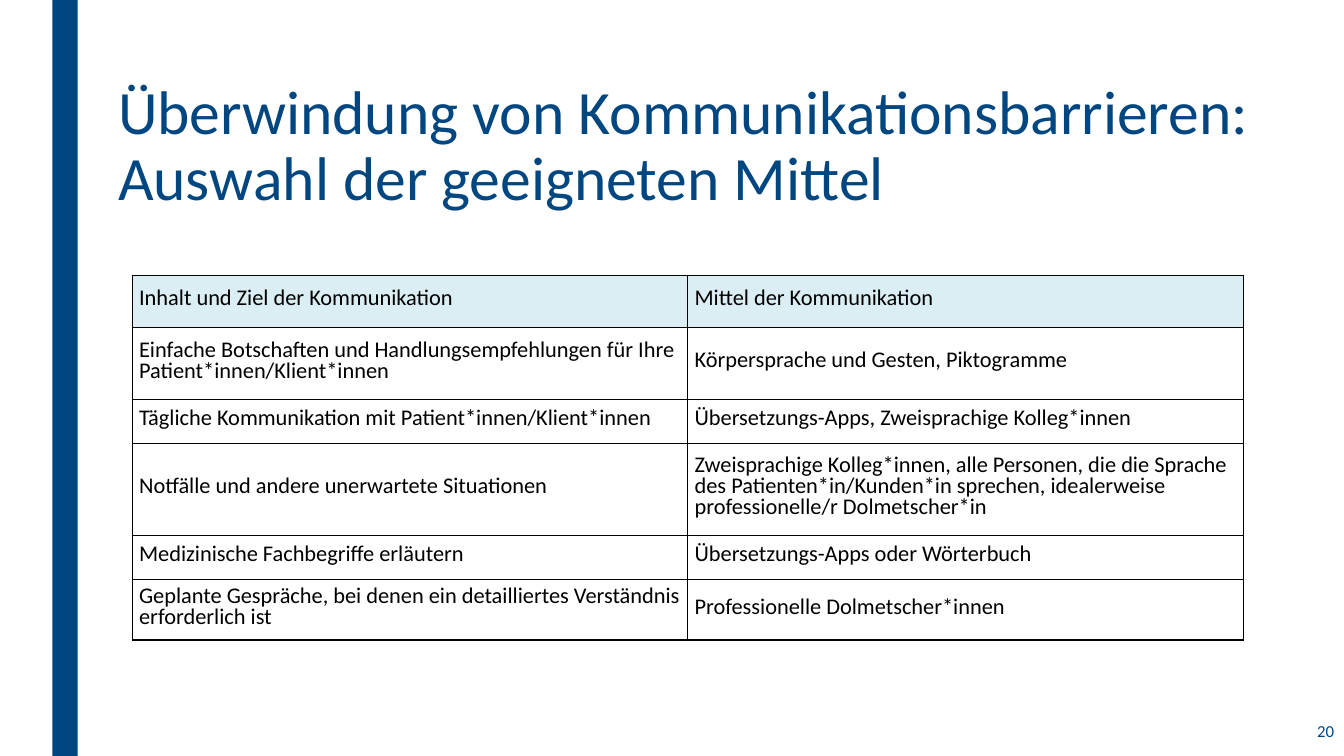
from lxml.etree import SubElement
from pptx import Presentation
from pptx.dml.color import RGBColor
from pptx.enum.shapes import MSO_SHAPE
from pptx.enum.text import MSO_ANCHOR, MSO_AUTO_SIZE, PP_ALIGN
from pptx.oxml.ns import qn
from pptx.util import Inches, Pt

NAVY, PALE, BLACK = "004680", "DBEEF4", "000000"


def tint(code):
    return RGBColor.from_string(code)


class Page:
    face = "Calibri"

    def __init__(self, deck):
        self.wide, self.high = deck.slide_width, deck.slide_height
        self.slide = deck.slides.add_slide(deck.slide_layouts[5])
        self.shapes = self.slide.shapes

    def across(self, share):
        return round(self.wide * share / 100)

    def down(self, share):
        return round(self.high * share / 100)

    def area(self, left, top, width, height):
        return self.across(left), self.down(top), self.across(width), self.down(height)

    def words(self, frame, text, size, color, align=PP_ALIGN.LEFT, lead=None):
        frame.word_wrap = True
        frame.text = text
        para = frame.paragraphs[0]
        para.alignment = align
        para.line_spacing = lead
        para.font.name = self.face
        para.font.size = Pt(size)
        para.font.color.rgb = tint(color)

    def title(self, text, *place):
        head = self.shapes.title
        head.left, head.top, head.width, head.height = self.area(*place)
        frame = head.text_frame
        frame.auto_size = MSO_AUTO_SIZE.NONE
        frame.vertical_anchor = MSO_ANCHOR.TOP
        self.words(frame, text, 44, NAVY, lead=0.89)

    def bar(self, color, *place):
        bar = self.shapes.add_shape(MSO_SHAPE.RECTANGLE, *self.area(*place))
        bar.shadow.inherit = False
        bar.fill.solid()
        bar.fill.fore_color.rgb = tint(color)
        bar.line.fill.background()

    def label(self, text, *place):
        frame = self.shapes.add_textbox(*self.area(*place)).text_frame
        frame.vertical_anchor = MSO_ANCHOR.MIDDLE
        self.words(frame, text, 12, NAVY, PP_ALIGN.RIGHT)

    def edge(self, cell):
        props = cell._tc.get_or_add_tcPr()
        for side in ("lnL", "lnR", "lnT", "lnB"):
            line = SubElement(props, qn("a:" + side), w=str(Pt(1)))
            fill = SubElement(line, qn("a:solidFill"))
            SubElement(fill, qn("a:srgbClr"), val=BLACK)

    def cell(self, cell, text, shade):
        cell.margin_left = cell.margin_right = Inches(0.07)
        cell.margin_top = cell.margin_bottom = 0
        cell.vertical_anchor = MSO_ANCHOR.MIDDLE
        self.edge(cell)
        if shade:
            cell.fill.solid()
            cell.fill.fore_color.rgb = tint(shade)
        else:
            cell.fill.background()
        self.words(cell.text_frame, text, 16, BLACK, lead=Pt(15))

    def table(self, rows, sizes, left, top, width):
        place = self.area(left, top, width, sum(sizes))
        grid = self.shapes.add_table(len(rows), len(rows[0]), *place).table
        grid.first_row = grid.horz_banding = False
        for i, (row, size) in enumerate(zip(rows, sizes)):
            grid.rows[i].height = self.down(size)
            for j, text in enumerate(row):
                self.cell(grid.cell(i, j), text, None if i else PALE)


ROWS = [
    ("Inhalt und Ziel der Kommunikation", "Mittel der Kommunikation"),
    ("Einfache Botschaften und Handlungsempfehlungen für Ihre Patient*innen/Klient*innen",
     "Körpersprache und Gesten, Piktogramme"),
    ("Tägliche Kommunikation mit Patient*innen/Klient*innen",
     "Übersetzungs-Apps, Zweisprachige Kolleg*innen"),
    ("Notfälle und andere unerwartete Situationen",
     "Zweisprachige Kolleg*innen, alle Personen, die die Sprache des "
     "Patienten*in/Kunden*in sprechen, idealerweise professionelle/r Dolmetscher*in"),
    ("Medizinische Fachbegriffe erläutern", "Übersetzungs-Apps oder Wörterbuch"),
    ("Geplante Gespräche, bei denen ein detailliertes Verständnis erforderlich ist",
     "Professionelle Dolmetscher*innen"),
]


def main():
    deck = Presentation()
    deck.slide_width, deck.slide_height = Inches(13.33), Inches(7.5)
    page = Page(deck)
    page.bar(NAVY, 3.9, 0, 1.88, 100)
    page.title("Überwindung von Kommunikationsbarrieren: Auswahl der geeigneten Mittel",
               8.03, 10.13, 86.05, 25.33)
    page.table(ROWS, (6.93, 9.47, 5.87, 12.13, 5.87, 8), 9.83, 36.4, 82.67)
    page.label("20", 86.87, 93.73, 13.13, 5.87)
    deck.save("out.pptx")


if __name__ == "__main__":
    main()
